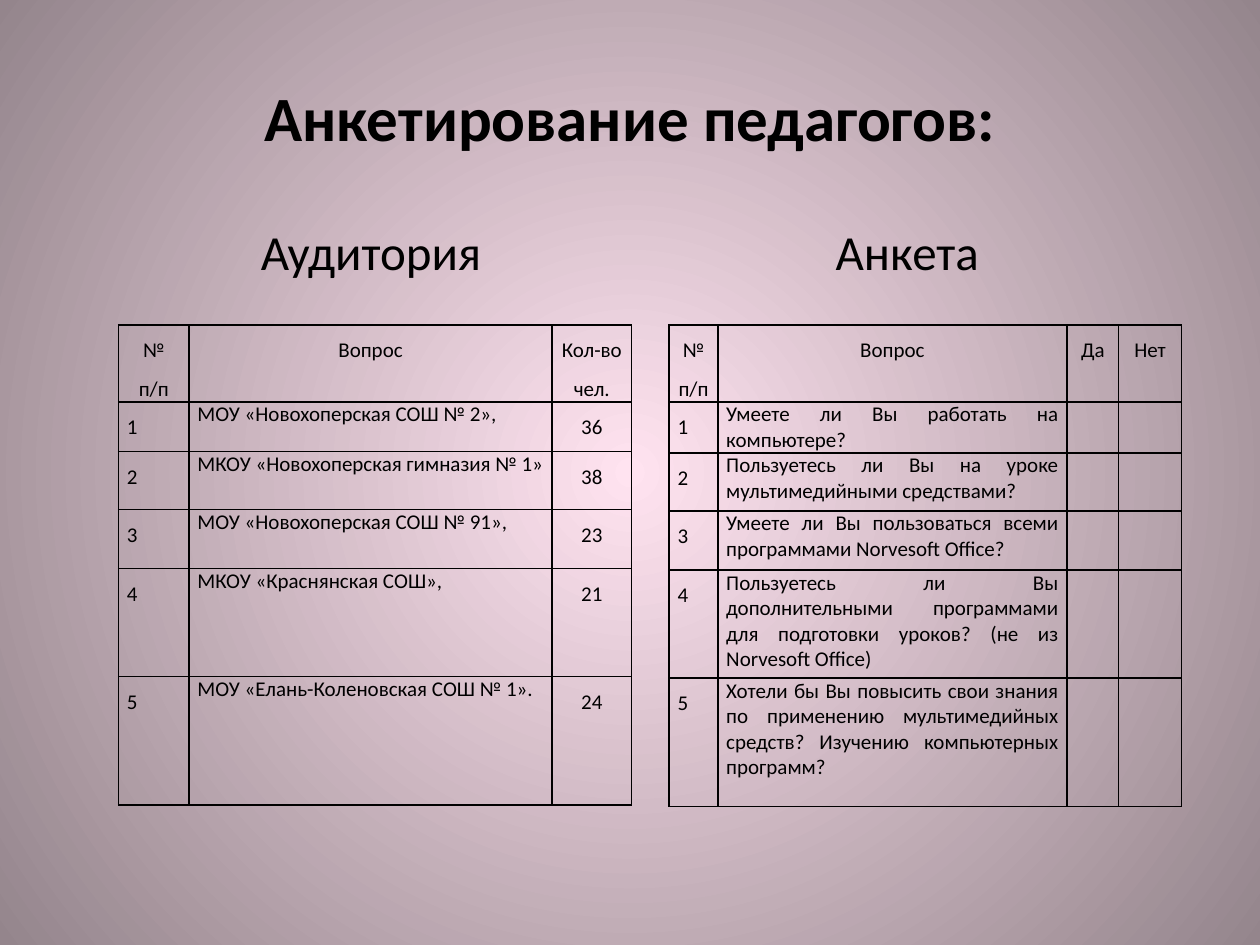
from lxml.etree import SubElement
from pptx import Presentation
from pptx.dml.color import RGBColor
from pptx.enum.text import MSO_ANCHOR as Anchor, PP_ALIGN as Align
from pptx.oxml.ns import qn
from pptx.util import Cm, Pt

BLACK = "000000"
ROW_HEIGHTS = [1.4, 1, 1.17, 1.19, 2.18, 2.59]
TABLES_TOP = 6.55
CELL_FORMAT = {"margin_left": Cm(0.17), "margin_right": Cm(0.17),
               "margin_top": 0, "margin_bottom": 0}

SURVEY = {
    "left": 13.49,
    "widths": [0.98, 7.04, 1.04, 1.27],
    "header": ["№ п/п", "Вопрос", "Да", "Нет"],
    "rows": [
        ["Умеете ли Вы работать на компьютере?"],
        ["Пользуетесь ли Вы на уроке мультимедийными средствами?"],
        ["Умеете ли Вы пользоваться всеми программами Norvesoft Office?"],
        ["Пользуетесь ли Вы дополнительными программами для подготовки "
         "уроков? (не из Norvesoft Office)"],
        ["Хотели бы Вы повысить свои знания по применению мультимедийных "
         "средств? Изучению компьютерных программ?"],
    ],
}
AUDIENCE = {
    "left": 2.39,
    "widths": [1.42, 7.32, 1.6],
    "header": ["№ п/п", "Вопрос", "Кол-во\nчел."],
    "rows": [
        ["МОУ «Новохоперская СОШ № 2»,", "36"],
        ["МКОУ «Новохоперская гимназия № 1»", "38"],
        ["МОУ «Новохоперская СОШ № 91»,", "23"],
        ["МКОУ «Краснянская СОШ»,", "21"],
        ["МОУ «Елань-Коленовская СОШ № 1».", "24"],
    ],
}
HEADINGS = {"Аудитория": 3.48, "Анкета": 14.29}


def color(hex_value):
    return RGBColor.from_string(hex_value)


def apply_format(target, values):
    for name, value in values.items():
        setattr(target, name, value)


def write(frame, text, size, align, bold=False, spacing=None):
    frame.text = text
    for paragraph in frame.paragraphs:
        apply_format(paragraph, {"alignment": align, "line_spacing": spacing})
        apply_format(paragraph.font, {"name": "Calibri", "size": Pt(size), "bold": bold})
        paragraph.font.color.rgb = color(BLACK)


def paint_background(slide, center, edge):
    fill = slide.background.fill
    fill.gradient()
    for stop, hex_value in zip(fill.gradient_stops, (center, edge)):
        stop.color.rgb = color(hex_value)
    gradient = slide.element.find(".//" + qn("a:gradFill"))
    gradient.remove(gradient.find(qn("a:lin")))
    circle = SubElement(gradient, qn("a:path"), {"path": "circle"})
    SubElement(circle, qn("a:fillToRect"), dict.fromkeys("ltrb", "50000"))


def add_title(slide, text):
    title = slide.shapes.title
    apply_format(title, {"left": Cm(1.27), "top": Cm(0.76),
                         "width": Cm(22.86), "height": Cm(3.18)})
    title.text_frame.vertical_anchor = Anchor.MIDDLE
    write(title.text_frame, text, 36, Align.CENTER, bold=True)


def add_heading(slide, text, left):
    frame = slide.shapes.add_textbox(Cm(left), Cm(4.17), Cm(8), Cm(1.78)).text_frame
    apply_format(frame, {"word_wrap": True, "vertical_anchor": Anchor.MIDDLE})
    write(frame, text, 28, Align.CENTER)


def draw_borders(cell):
    properties = cell._tc.get_or_add_tcPr()
    for side in "LRTB":
        line = SubElement(properties, qn(f"a:ln{side}"), {"w": str(Pt(1))})
        fill = SubElement(line, qn("a:solidFill"))
        SubElement(fill, qn("a:srgbClr"), {"val": BLACK})


def add_numbered_table(slide, left, widths, header, rows):
    """Add a table whose first column counts the rows; short rows leave cells empty."""
    table = slide.shapes.add_table(
        len(rows) + 1, len(widths), Cm(left), Cm(TABLES_TOP),
        Cm(sum(widths)), Cm(sum(ROW_HEIGHTS))).table
    apply_format(table, {"first_row": False, "horz_banding": False})
    for column, width in zip(table.columns, widths):
        column.width = Cm(width)
    for row, height in zip(table.rows, ROW_HEIGHTS):
        row.height = Cm(height)
    for cell in table.iter_cells():
        draw_borders(cell)
        cell.fill.background()
        apply_format(cell, CELL_FORMAT)

    lines = [header] + [[str(number), *row] for number, row in enumerate(rows, 1)]
    for r, line in enumerate(lines):
        for c, text in enumerate(line):
            is_question = r > 0 and c == 1
            align = Align.JUSTIFY if r > 0 and c < 2 else Align.CENTER
            write(table.cell(r, c).text_frame, text, 12, align,
                  spacing=None if is_question else 1.5)


def main():
    deck = Presentation()
    apply_format(deck, {"slide_width": Cm(25.4), "slide_height": Cm(19.05)})
    slide = deck.slides.add_slide(deck.slide_layouts[5])
    paint_background(slide, "FFE3F0", "94858C")
    add_title(slide, "Анкетирование педагогов:")
    for table in (SURVEY, AUDIENCE):
        add_numbered_table(slide, **table)
    for text, left in HEADINGS.items():
        add_heading(slide, text, left)
    deck.save("out.pptx")


if __name__ == "__main__":
    main()
